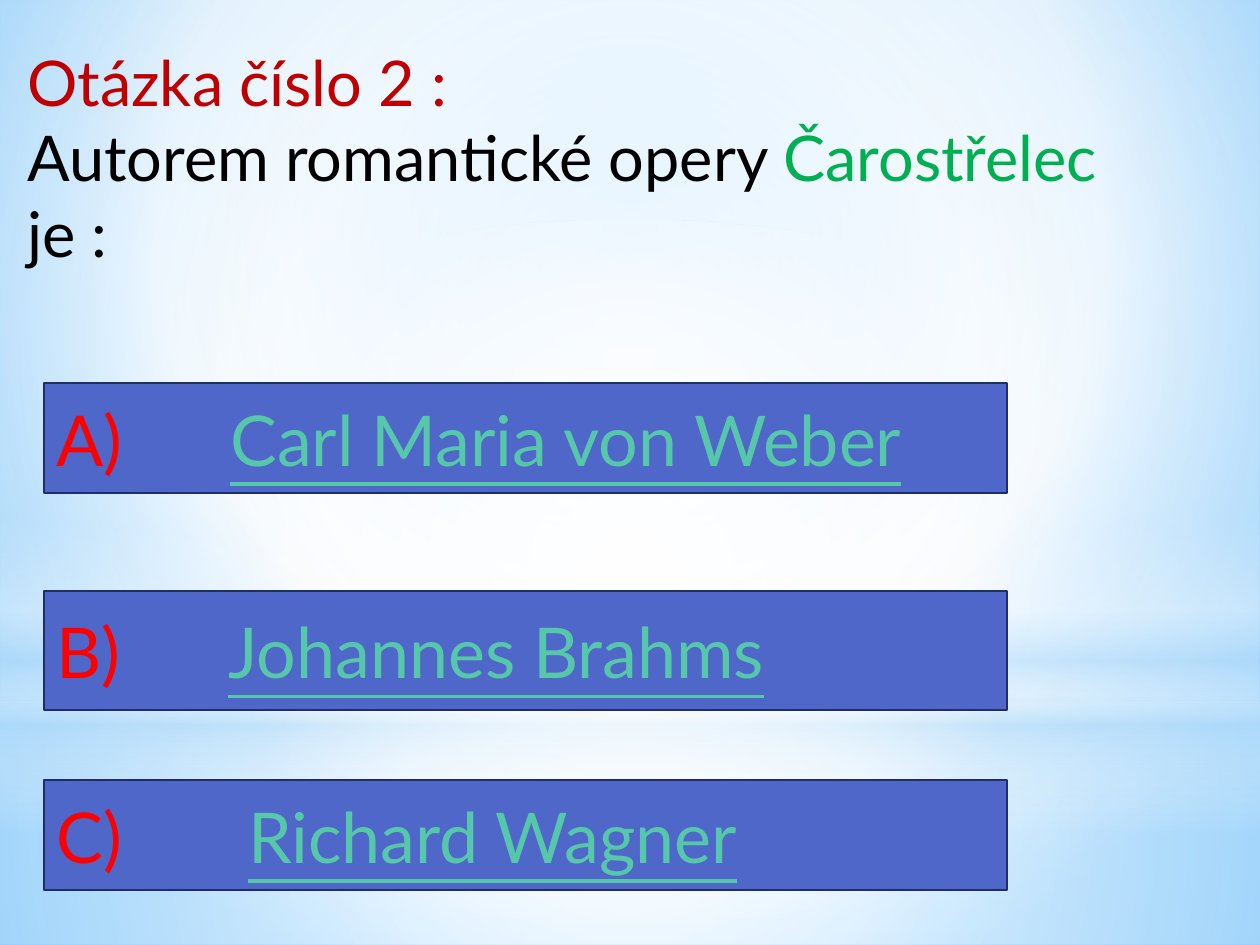
from lxml import etree
from pptx import Presentation
from pptx.dml.color import RGBColor
from pptx.enum.shapes import MSO_SHAPE
from pptx.enum.text import MSO_ANCHOR, PP_ALIGN
from pptx.oxml.ns import qn
from pptx.util import Pt

RECT, OVAL = MSO_SHAPE.RECTANGLE, MSO_SHAPE.OVAL
MIDDLE, LEFT = MSO_ANCHOR.MIDDLE, PP_ALIGN.LEFT
SCALE = 914400 / 126  # EMU per px


def px(*lengths):
    return [round(length * SCALE) for length in lengths]


def set_gradient(owner, element, stops, center=None):
    """Stops are (position %, colour, opacity %); no center means top to bottom."""
    owner.fill.gradient()
    grad = element.find(".//" + qn("a:gradFill"))
    for child in list(grad):
        grad.remove(child)
    stop_list = etree.SubElement(grad, qn("a:gsLst"))
    for position, color, opacity in stops:
        stop = etree.SubElement(stop_list, qn("a:gs"), pos=str(position * 1000))
        tint = etree.SubElement(stop, qn("a:srgbClr"), val=color)
        etree.SubElement(tint, qn("a:alpha"), val=str(opacity * 1000))
    if center:
        circle = etree.SubElement(grad, qn("a:path"), path="circle")
        sides = {side: str(value * 1000) for side, value in zip("ltrb", center)}
        etree.SubElement(circle, qn("a:fillToRect"), **sides)
    else:
        etree.SubElement(grad, qn("a:lin"), ang="5400000", scaled="0")


deck = Presentation()
deck.slide_width, deck.slide_height = px(1260, 945)
page = deck.slides.add_slide(deck.slide_layouts[6])

# Background
set_gradient(page.background, page.element,
             [(0, "9ED5FF", 100), (60, "FFFFFF", 100), (100, "5BB9FF", 100)],
             (20, 10, 20, 60))

# Soft light layers: outline, top, height, gradient stops, center
MID = (50, 50, 50, 50)
layers = [
    (RECT, 703, 242, [(0, "FFFFFF", 91), (37, "FFFFFF", 76), (100, "B4DCFA", 79)], MID),
    (RECT, 0, 703, [(0, "FFFFFF", 89), (48, "FFFFFF", 62), (100, "B4DCFA", 79)], MID),
    (RECT, 519, 315, [(0, "FFFFFF", 0), (29, "FFFFFF", 30), (45, "B4DCFA", 40),
                      (55, "FFFFFF", 26), (65, "B4DCFA", 60), (100, "FFFFFF", 0)], None),
    (OVAL, 220, 703, [(0, "FFFFFF", 100), (56, "FFFFFF", 0)], MID),
]
for outline, top, height, stops, center in layers:
    layer = page.shapes.add_shape(outline, *px(0, top, 1260, height))
    layer.shadow.inherit = False
    layer.line.fill.background()
    set_gradient(layer, layer.element, stops, center)

# Question
box = page.shapes.add_textbox(*px(15, 37, 1230, 242))
box.text_frame.word_wrap = True
para = box.text_frame.paragraphs[0]
question = [
    ("Otázka číslo 2 :", "C00000", True),
    ("Autorem romantické opery ", "000000", False),
    ("Čarostřelec", "00B050", True),
    ("je :", "000000", False),
]
for words, color, line_end in question:
    span = para.add_run()
    span.text = words
    for name, value in {"name": "Lato", "size": Pt(36)}.items():
        setattr(span.font, name, value)
    span.font.color.rgb = RGBColor.from_string(color)
    if line_end:
        para.add_line_break()

# Answers: letter, composer, top, height, tab position
answers = [
    ("A)", "Carl Maria von Weber", 383, 110, 174),
    ("B)", "Johannes Brahms", 591, 119, 172),
    ("C)", "Richard Wagner", 780, 110, 192),
]
for letter, composer, top, height, tab in answers:
    bar = page.shapes.add_shape(RECT, *px(44, top, 963, height))
    bar.shadow.inherit = False
    bar.fill.solid()
    bar.fill.fore_color.rgb = RGBColor.from_string("4E67C8")
    bar.line.color.rgb = RGBColor.from_string("1F2E69")
    bar.line.width = Pt(1.25)
    bar.text_frame.vertical_anchor = MIDDLE
    para = bar.text_frame.paragraphs[0]
    para.alignment = LEFT
    tabs = etree.SubElement(para._p.get_or_add_pPr(), qn("a:tabLst"))
    etree.SubElement(tabs, qn("a:tab"), pos=str(px(tab)[0]), algn="l")
    for words, color, underline in ((letter + "\t", "FF0000", False),
                                    (composer, "56C7AA", True)):
        span = para.add_run()
        span.text = words
        for name, value in {"name": "Lato", "size": Pt(40), "underline": underline}.items():
            setattr(span.font, name, value)
        span.font.color.rgb = RGBColor.from_string(color)

deck.save("out.pptx")
